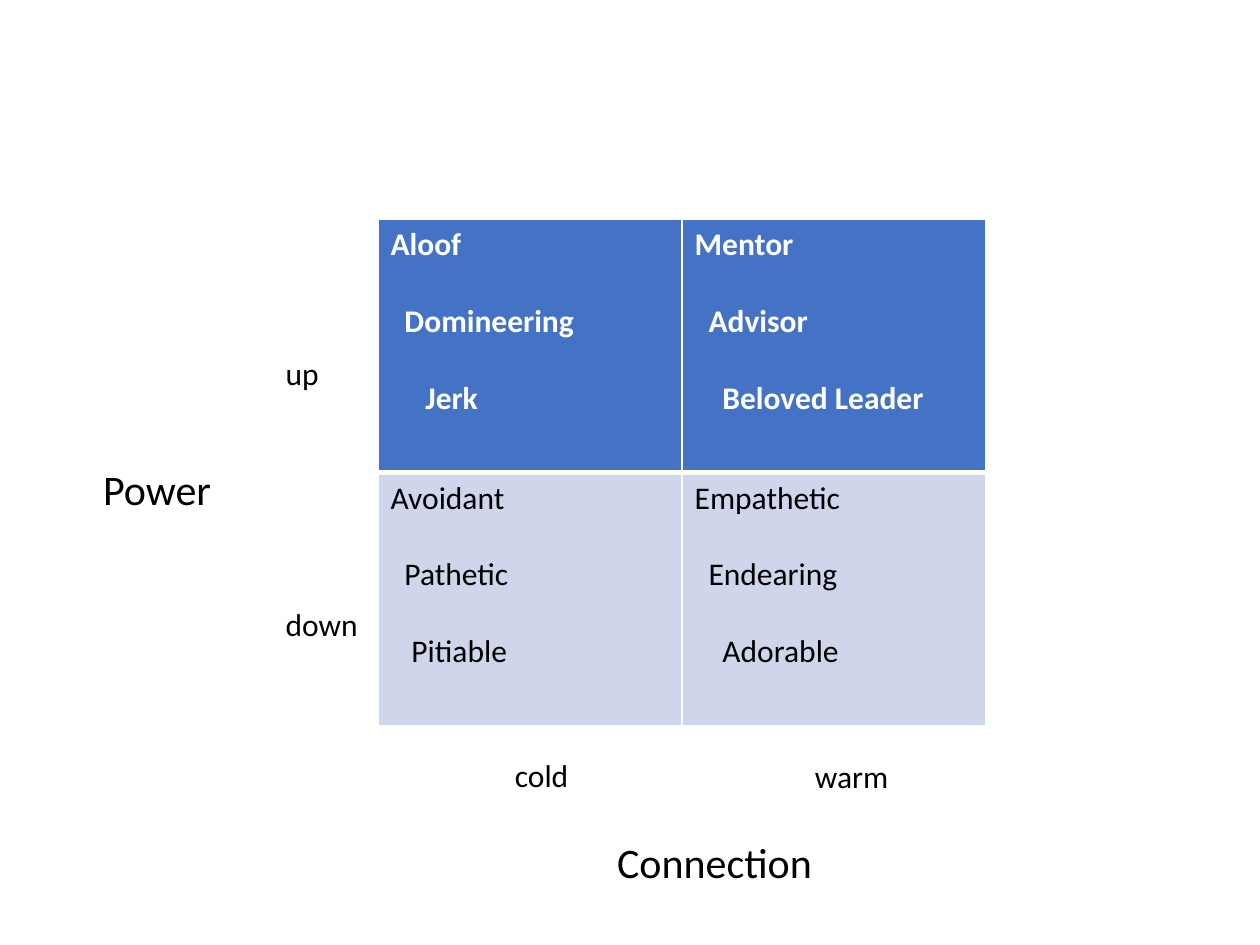
from dataclasses import dataclass

from lxml.etree import SubElement
from pptx import Presentation
from pptx.dml.color import RGBColor
from pptx.enum.text import MSO_AUTO_SIZE as AutoSize
from pptx.oxml.ns import qn
from pptx.util import Cm, Pt


@dataclass(frozen=True)
class Theme:
    font: str = "Calibri"
    body: int = 18
    axis: int = 24
    line_gap: int = 22
    light: str = "FFFFFF"
    dark: str = "000000"
    up_fill: str = "4472C4"
    down_fill: str = "CFD5EA"


theme = Theme()


def format_text(paragraph, size, color, bold=False):
    font = paragraph.font
    font.name, font.size, font.bold = theme.font, Pt(size), bold
    font.color.rgb = RGBColor.from_string(color)


def add_border(cell, side, width):
    line = SubElement(cell._tc.get_or_add_tcPr(), qn(f"a:ln{side}"), w=str(Pt(width)))
    fill = SubElement(line, qn("a:solidFill"))
    SubElement(fill, qn("a:srgbClr"), val=theme.light)


presentation = Presentation()
presentation.slide_width, presentation.slide_height = Cm(25.4), Cm(19.05)
slide = presentation.slides.add_slide(presentation.slide_layouts[6])

# Power and connection matrix: each word with its indent in steps
indent_step = Cm(0.14)
quadrants = [
    [[("Aloof", 0), ("Domineering", 2), ("Jerk", 5)],
     [("Mentor", 0), ("Advisor", 2), ("Beloved Leader", 4)]],
    [[("Avoidant", 0), ("Pathetic", 2), ("Pitiable", 3)],
     [("Empathetic", 0), ("Endearing", 2), ("Adorable", 4)]],
]
row_styles = [  # fill, text colour, bold, top and bottom border widths
    (theme.up_fill, theme.light, True, 1, 3),
    (theme.down_fill, theme.dark, False, 3, 1),
]
matrix = slide.shapes.add_table(2, 2, Cm(7.62), Cm(4.42), Cm(12.26), Cm(10.22)).table

for row, (fill, color, bold, top, bottom) in enumerate(row_styles):
    for column, words in enumerate(quadrants[row]):
        cell = matrix.cell(row, column)
        for side, width in (("L", 1), ("R", 1), ("T", top), ("B", bottom)):
            add_border(cell, side, width)
        cell.fill.solid()
        cell.fill.fore_color.rgb = RGBColor.from_string(fill)
        cell.text_frame.text = "\n".join(word for word, _ in words)
        for index, (_, steps) in enumerate(words):
            paragraph = cell.text_frame.paragraphs[index]
            paragraph._p.get_or_add_pPr().set("marL", str(indent_step * steps))
            if index:
                paragraph.space_before = Pt(theme.line_gap)
            format_text(paragraph, theme.body, color, bold)

# Axis titles and their levels
labels = [  # text, left, top, width, height, size, wrap
    ("up", 5.51, 7.01, 1.7, 1.02, theme.body, True),
    ("down", 5.51, 12.07, 2.82, 1.02, theme.body, True),
    ("Power", 1.83, 9.22, 3.35, 1.27, theme.axis, True),
    ("Connection", 12.19, 16.74, 4.5, 1.27, theme.axis, False),
    ("cold", 10.13, 15.11, 1.6, 1.02, theme.body, False),
    ("warm", 16.18, 15.14, 2.01, 1.02, theme.body, False),
]
for text, left, top, width, height, size, wrap in labels:
    label = slide.shapes.add_textbox(Cm(left), Cm(top), Cm(width), Cm(height))
    frame = label.text_frame
    frame.word_wrap = wrap
    frame.auto_size = AutoSize.SHAPE_TO_FIT_TEXT
    frame.text = text
    format_text(frame.paragraphs[0], size, theme.dark)

presentation.save("out.pptx")
